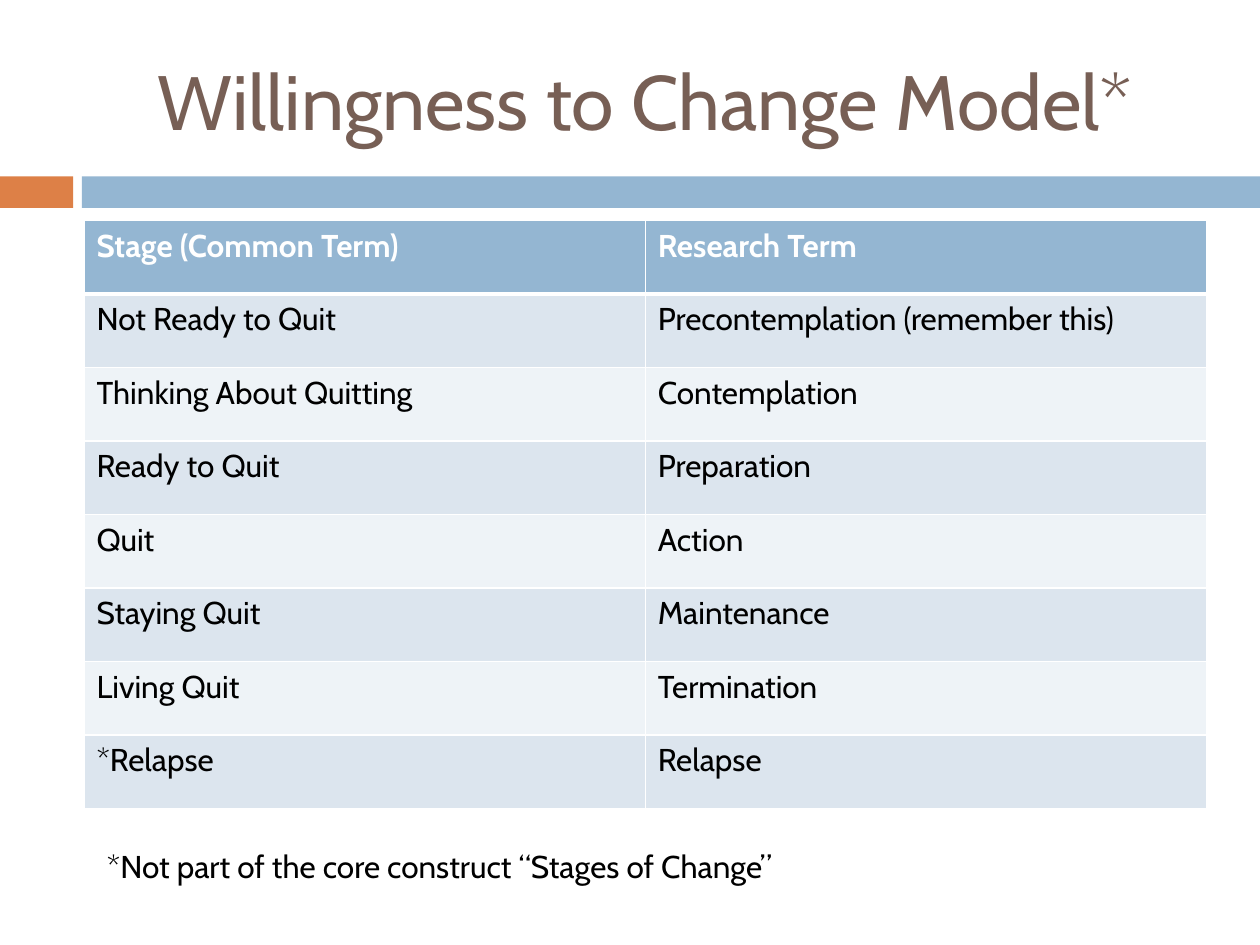
import pptx
import pptx.util
import pptx.dml.color
import pptx.enum.shapes
import pptx.enum.text
import pptx.oxml
import pptx.oxml.ns
import lxml.etree

WIDTH, HEIGHT = 10, 7.5
FONT = "Cabin"
COLORS = {
    "title": "775F55",
    "accent": "DD8047",
    "band": "94B6D2",
    "odd": "DCE5EE",
    "even": "EEF3F7",
    "text": "000000",
    "white": "FFFFFF",
}
STAGES = [
    ("Stage (Common Term)", "Research Term"),
    ("Not Ready to Quit", "Precontemplation (remember this)"),
    ("Thinking About Quitting", "Contemplation"),
    ("Ready to Quit", "Preparation"),
    ("Quit", "Action"),
    ("Staying Quit", "Maintenance"),
    ("Living Quit", "Termination"),
    ("*Relapse", "Relapse"),
]


def color(name):
    return pptx.dml.color.RGBColor.from_string(COLORS[name])


def inches(box):
    return [pptx.util.Inches(length) for length in box]


def add_span(para, text, size, tint, bold=False):
    span = para.add_run()
    span.text = text
    span.font.name = FONT
    span.font.size = pptx.util.Pt(size)
    span.font.bold = bold
    span.font.color.rgb = color(tint)


def add_title(page, box, text):
    title = page.shapes.title
    title.left, title.top, title.width, title.height = inches(box)
    frame = title.text_frame
    frame.word_wrap = True
    frame.vertical_anchor = pptx.enum.text.MSO_ANCHOR.MIDDLE
    para = frame.paragraphs[0]
    para.alignment = pptx.enum.text.PP_ALIGN.CENTER
    add_span(para, text, 44, "title")


def add_band(page, box):
    left, top, width, height = box
    accent_width, gap = 0.58, 0.07
    start = accent_width + gap
    parts = [(left, accent_width, "accent"), (left + start, width - start, "band")]
    for part_left, part_width, tint in parts:
        bar = page.shapes.add_shape(
            pptx.enum.shapes.MSO_SHAPE.RECTANGLE,
            *inches((part_left, top, part_width, height)),
        )
        bar.shadow.inherit = False
        bar.fill.solid()
        bar.fill.fore_color.rgb = color(tint)
        bar.line.fill.background()


def set_borders(cell, widths):
    properties = cell._tc.get_or_add_tcPr()
    for index, (side, width) in enumerate(widths.items()):
        line = lxml.etree.Element(
            pptx.oxml.ns.qn(f"a:{side}"), w=str(pptx.util.Pt(width))
        )
        fill = lxml.etree.SubElement(line, pptx.oxml.ns.qn("a:solidFill"))
        lxml.etree.SubElement(fill, pptx.oxml.ns.qn("a:srgbClr"), val=COLORS["white"])
        properties.insert(index, line)


def add_stage_table(page, box, rows):
    table = page.shapes.add_table(len(rows), len(rows[0]), *inches(box)).table
    for row_index, row in enumerate(rows):
        header = row_index == 0
        tint = "band" if header else ("even", "odd")[row_index % 2]
        widths = {
            "lnL": 1,
            "lnR": 1,
            "lnT": 3 if row_index == 1 else 1,
            "lnB": 3 if header else 1,
        }
        for column_index, text in enumerate(row):
            cell = table.cell(row_index, column_index)
            cell.fill.solid()
            cell.fill.fore_color.rgb = color(tint)
            set_borders(cell, widths)
            para = cell.text_frame.paragraphs[0]
            add_span(para, text, 18, "white" if header else "text", header)


def add_footnote(page, box, text):
    note = page.shapes.add_textbox(*inches(box))
    frame = note.text_frame
    frame.word_wrap = True
    frame.auto_size = pptx.enum.text.MSO_AUTO_SIZE.SHAPE_TO_FIT_TEXT
    add_span(frame.paragraphs[0], text, 18, "text")


def main():
    deck = pptx.Presentation()
    deck.slide_width, deck.slide_height = inches((WIDTH, HEIGHT))
    page = deck.slides.add_slide(deck.slide_layouts[5])
    margin = WIDTH / 15
    content_width = 8.91
    add_band(page, (0, 1.4, WIDTH, 0.25))
    add_title(page, (margin, HEIGHT / 30, content_width, 1.08), "Willingness to Change Model*")
    add_stage_table(page, (margin, 1.75, content_width, 4.67), STAGES)
    add_footnote(
        page,
        (0.75, 6.67, 8.75, 0.4),
        "*Not part of the core construct “Stages of Change”",
    )
    deck.save("out.pptx")


if __name__ == "__main__":
    main()
